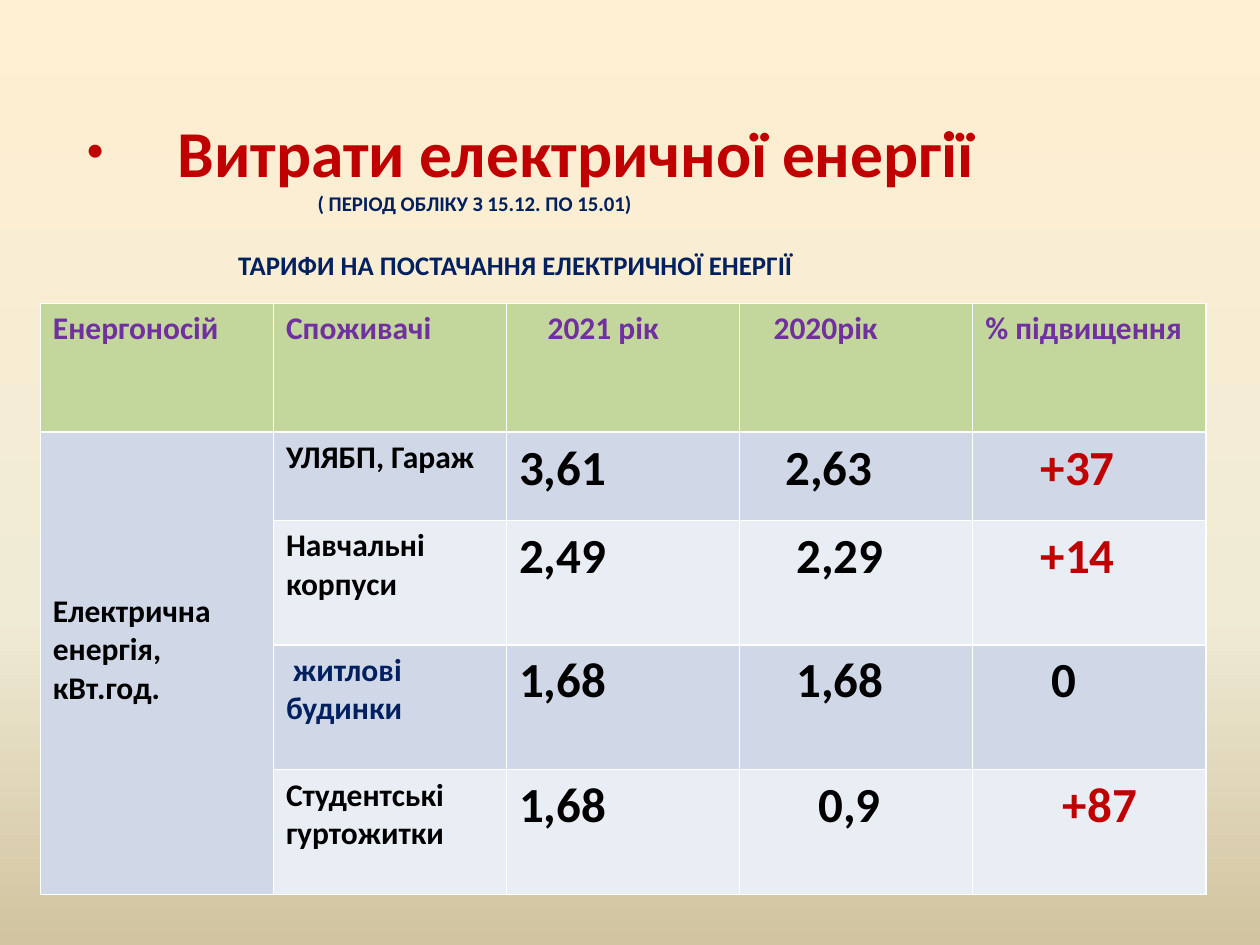
from lxml import etree
from pptx import Presentation
from pptx.dml.color import RGBColor
from pptx.enum.text import MSO_AUTO_SIZE
from pptx.oxml.ns import qn
from pptx.util import Inches, Pt

NO_AUTOFIT = MSO_AUTO_SIZE.NONE
FONT = "Calibri"
SPACE_WIDTH = 0.226
COLORS = {
    "red": "C00000", "navy": "002060", "purple": "7030A0", "black": "000000",
    "header": "C3D69B", "band_dark": "D0D8E8", "band_light": "E9EDF4",
}
BACKGROUND_STOPS = [(0, "FFEFD1"), (65, "F0EBD5"), (100, "D1C39F")]
HEADING_LINES = [
    ("Витрати електричної енергії", 37.4, "red", 0.72, 2),
    ("( ПЕРІОД ОБЛІКУ З 15.12. ПО 15.01)", 11.9, "navy", 1.83, 0),
    ("ТАРИФИ НА ПОСТАЧАННЯ ЕЛЕКТРИЧНОЇ ЕНЕРГІЇ", 15.3, "navy", 1.2, 19),
]
HEADERS = [("Енергоносій", 0), ("Споживачі", 0), ("2021 рік", 4),
           ("2020рік", 3), ("% підвищення", 0)]
CONSUMERS = [
    (("УЛЯБП, Гараж", 0, "black"), "3,61", ("2,63", 3), ("+37", 5, "red")),
    (("Навчальні корпуси", 0, "black"), "2,49", ("2,29", 4), ("+14", 5, "red")),
    (("житлові будинки", 1, "navy"), "1,68", ("1,68", 4), ("0", 6, "black")),
    (("Студентські гуртожитки", 0, "black"), "1,68", ("0,9", 6), ("+87", 7, "red")),
]
ROW_HEIGHTS = [1.02, 0.7, 0.99, 0.99, 0.99]
COLUMN_WIDTH = 1.85


def paint_background(page):
    """Fill the page with the vertical three-stop gradient."""
    fill = page.background.fill
    fill.gradient()
    fill.gradient_angle = 270
    stops = page.background._cSld.find(".//" + qn("a:gsLst"))
    for stop in list(stops):
        stops.remove(stop)
    for percent, color in BACKGROUND_STOPS:
        stop = etree.SubElement(stops, qn("a:gs"), pos=str(percent * 1000))
        etree.SubElement(stop, qn("a:srgbClr"), val=color)


def format_text(para, size, color):
    """Give every span of a paragraph the bold font, size and colour."""
    for span in para.runs:
        span.font.name = FONT
        span.font.size = Pt(size)
        span.font.bold = True
        span.font.color.rgb = RGBColor.from_string(COLORS[color])


def set_indent(para, margin, first_line):
    """Set the left margin and first-line indent of a paragraph."""
    properties = para._p.get_or_add_pPr()
    properties.set("marL", str(Inches(margin)))
    properties.set("indent", str(Inches(first_line)))
    return properties


def add_heading(page):
    """Place the bulleted heading and its two subheadings in the body."""
    box = page.placeholders[1]
    box.left, box.top = Inches(0.59), Inches(0.84)
    box.width, box.height = Inches(9), Inches(1.26)
    frame = box.text_frame
    frame.auto_size = NO_AUTOFIT
    frame.text = "\n".join(line[0] for line in HEADING_LINES)
    for number, (para, line) in enumerate(zip(frame.paragraphs, HEADING_LINES)):
        size, color, margin, gap = line[1:]
        format_text(para, size, color)
        para.space_before = Pt(gap)
        properties = set_indent(para, margin, 0 if number else -margin)
        if number:
            etree.SubElement(properties, qn("a:buNone"))
        else:
            etree.SubElement(properties, qn("a:buSzPct"), val="73000")
            etree.SubElement(properties, qn("a:buFont"), typeface="Arial")
            etree.SubElement(properties, qn("a:buChar"), char="•")


def fill_cell(cell, text, fill, size=18, color="black", spaces=0):
    """Write one table cell, indented by a number of space widths."""
    cell.fill.solid()
    cell.fill.fore_color.rgb = RGBColor.from_string(COLORS[fill])
    cell.text_frame.text = text
    para = cell.text_frame.paragraphs[0]
    format_text(para, size, color)
    if spaces:
        set_indent(para, 0, spaces * size * SPACE_WIDTH / 72)


def add_tariff_table(page):
    """Add the tariff table with a merged energy-carrier column."""
    columns, rows = len(HEADERS), len(ROW_HEIGHTS)
    table = page.shapes.add_table(
        rows, columns, Inches(0.32), Inches(2.41),
        Inches(columns * COLUMN_WIDTH), Inches(sum(ROW_HEIGHTS))).table
    for row, height in zip(table.rows, ROW_HEIGHTS):
        row.height = Inches(height)
    for column, (text, spaces) in enumerate(HEADERS):
        fill_cell(table.cell(0, column), text, "header", color="purple", spaces=spaces)

    carrier = table.cell(1, 0)
    carrier.merge(table.cell(rows - 1, 0))
    fill_cell(carrier, "Електрична енергія, кВт.год.", "band_dark")
    carrier.margin_top = Inches(1.27)

    for row, (consumer, current, previous, rise) in enumerate(CONSUMERS, 1):
        fill = "band_dark" if row % 2 else "band_light"
        name, name_spaces, name_color = consumer
        fill_cell(table.cell(row, 1), name, fill, color=name_color, spaces=name_spaces)
        values = [(current, 0, "black"), (*previous, "black"), rise]
        for column, (text, spaces, color) in enumerate(values, 2):
            fill_cell(table.cell(row, column), text, fill, 28, color, spaces)


def main():
    """Build and save the deck."""
    deck = Presentation()
    deck.slide_width, deck.slide_height = Inches(10), Inches(7.5)
    page = deck.slides.add_slide(deck.slide_layouts[1])
    title = page.shapes.title.element
    title.getparent().remove(title)
    paint_background(page)
    add_heading(page)
    add_tariff_table(page)
    deck.save("out.pptx")


if __name__ == "__main__":
    main()
